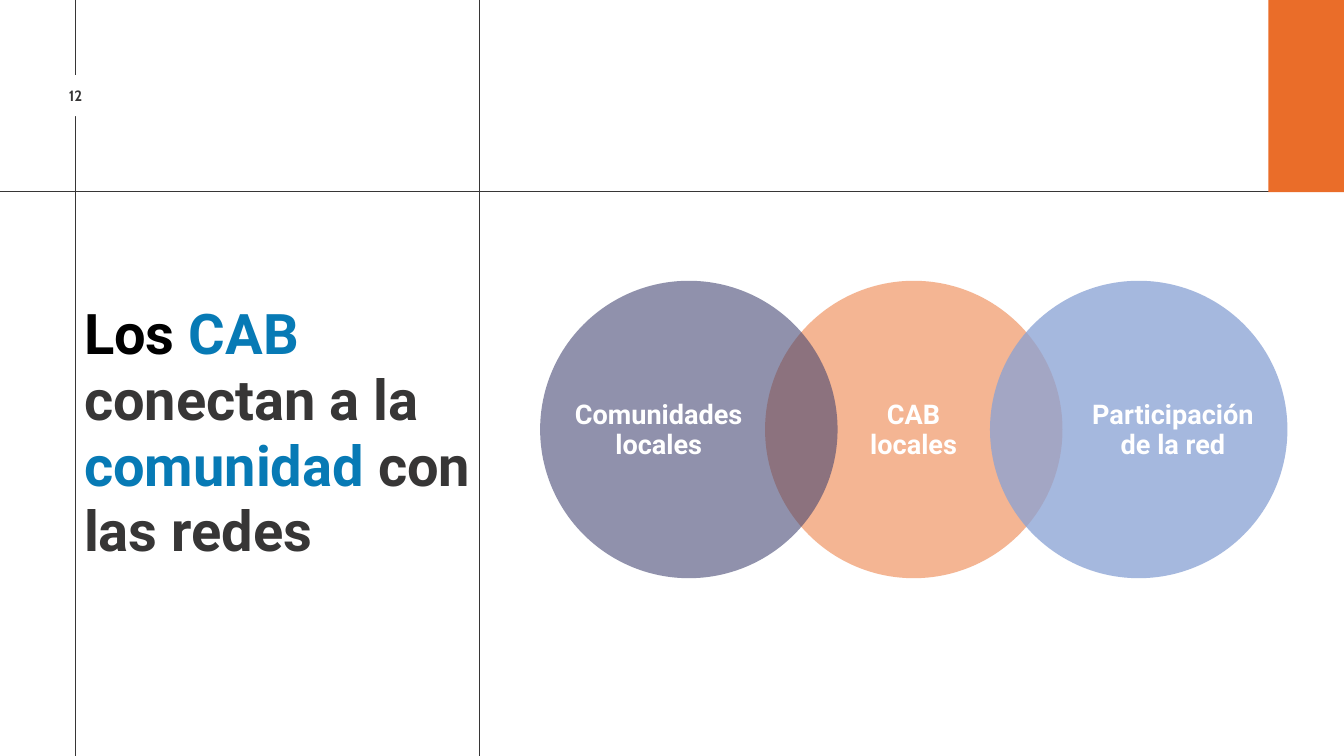
"""Build the slide on how CABs connect the community with the networks."""
from lxml.etree import SubElement
from pptx import Presentation
from pptx.dml.color import RGBColor
from pptx.enum.shapes import MSO_CONNECTOR, MSO_SHAPE
from pptx.enum.text import PP_ALIGN
from pptx.oxml.ns import qn
from pptx.util import Pt

INK, WHITE, BLUE, ORANGE = "373636", "FFFFFF", "077AB5", "EA6D29"

presentation = Presentation()
presentation.slide_width, presentation.slide_height = Pt(1440), Pt(810)
slide = presentation.slides.add_slide(presentation.slide_layouts[6])


def add_filled(preset, left, top, width, height, color, opacity=100):
    shape = slide.shapes.add_shape(preset, Pt(left), Pt(top), Pt(width), Pt(height))
    shape.shadow.inherit = False
    shape.line.fill.background()
    shape.fill.solid()
    shape.fill.fore_color.rgb = RGBColor.from_string(color)
    if opacity < 100:
        tint = shape.fill._xPr.find(qn("a:solidFill"))[0]
        SubElement(tint, qn("a:alpha")).set("val", str(opacity * 1000))


def add_text(paragraphs, left, top, width, height, *, size, spacing,
             font="Roboto", align=PP_ALIGN.CENTER):
    frame = slide.shapes.add_textbox(Pt(left), Pt(top), Pt(width), Pt(height)).text_frame
    frame.word_wrap = True
    frame.margin_left = frame.margin_right = frame.margin_top = frame.margin_bottom = 0
    for index, pieces in enumerate(paragraphs):
        paragraph = frame.add_paragraph() if index else frame.paragraphs[0]
        paragraph.alignment = align
        paragraph.line_spacing = Pt(spacing)
        for words, color in pieces:
            run = paragraph.add_run()
            run.text = words
            run.font.name, run.font.size, run.font.bold = font, Pt(size), True
            run.font.color.rgb = RGBColor.from_string(color)


for x1, y1, x2, y2 in [(80.5, 0, 80.5, 810), (0, 205.5, 1440, 205.5), (513.5, 0, 513.5, 810)]:
    rule = slide.shapes.add_connector(MSO_CONNECTOR.STRAIGHT, Pt(x1), Pt(y1), Pt(x2), Pt(y2))
    rule.line.color.rgb = RGBColor.from_string(INK)
    rule.line.width = Pt(0.75)
    SubElement(rule._element.spPr, qn("a:effectLst"))

add_filled(MSO_SHAPE.RECTANGLE, 49.7, 80.6, 61.9, 43.9, WHITE)
add_text([[("12", INK)]], 54.7, 94.3, 52.6, 18, size=16, spacing=17.6, font="Cabin")
add_filled(MSO_SHAPE.RECTANGLE, 1359, 0, 81, 206, ORANGE)

first_left, circle_step, diameter = 578.7, 241, 318.7
for position, color, opacity in [(1, ORANGE, 50), (0, "414370", 58), (2, "8AA2D4", 76)]:
    add_filled(MSO_SHAPE.OVAL, first_left + position * circle_step, 300.8,
               diameter, diameter, color, opacity)

title = [("Los ", "000000"), ("CAB", BLUE), (" conectan a la ", INK),
         ("comunidad", BLUE), (" con las redes", INK)]
add_text([title], 90, 321.8, 450, 280.8, size=60, spacing=70.4, align=PP_ALIGN.LEFT)

for lines, left, width in [(["Comunidades locales"], 602.6, 206.6),
                           (["CAB", "locales"], 884.2, 189.4),
                           (["Participación", "de la red"], 1154.2, 205.2)]:
    add_text([[(line, WHITE)] for line in lines], left, 429.1, width, 64, size=29, spacing=31.9)

presentation.save("out.pptx")
